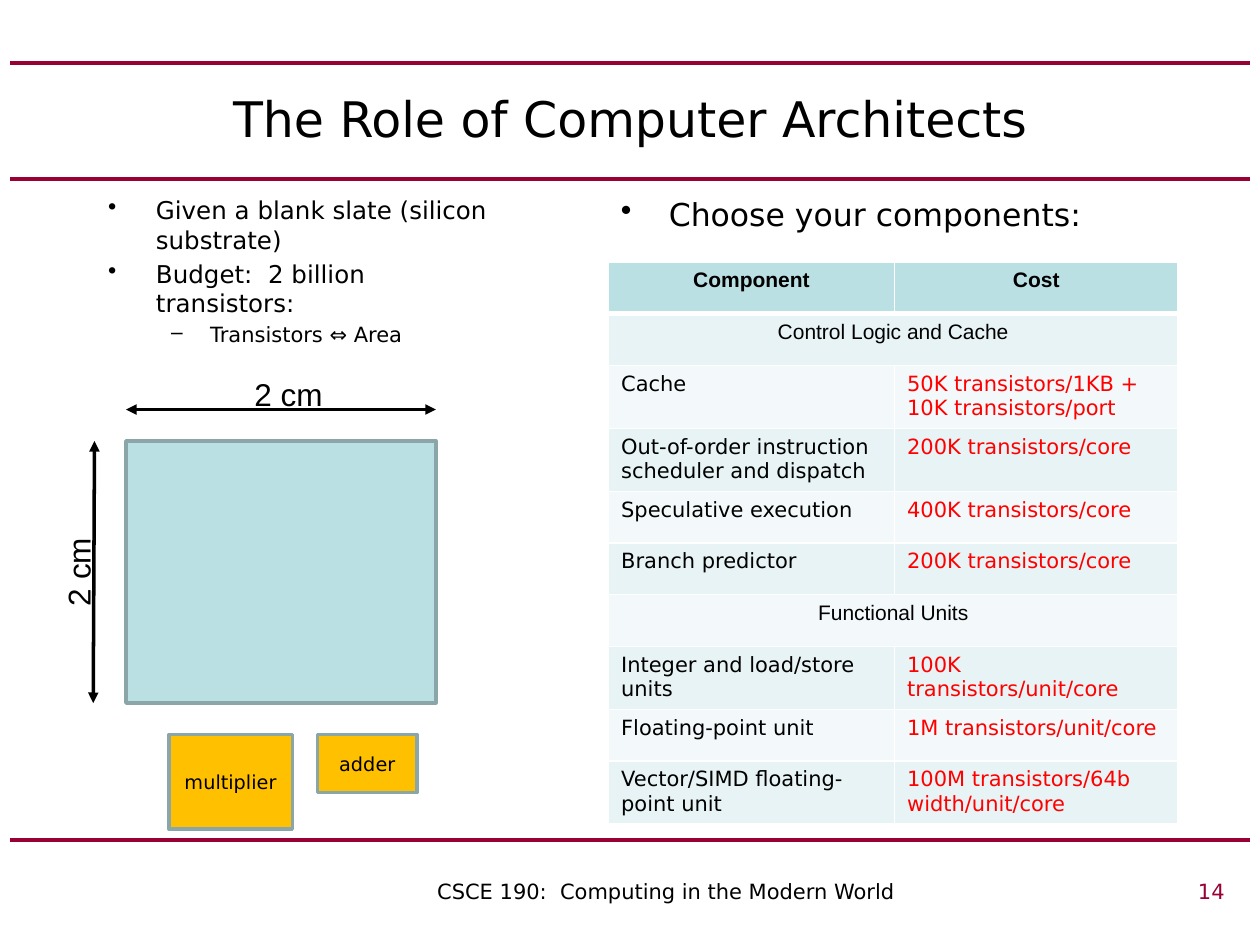
from lxml import etree
from pptx import Presentation
from pptx.dml.color import RGBColor
from pptx.enum.dml import MSO_THEME_COLOR
from pptx.enum.shapes import MSO_CONNECTOR, MSO_SHAPE
from pptx.enum.text import MSO_ANCHOR, PP_ALIGN
from pptx.oxml import parse_xml
from pptx.oxml.ns import nsdecls, qn
from pptx.util import Inches, Pt

CENTER, LEFT = PP_ALIGN.CENTER, PP_ALIGN.LEFT
MIDDLE, TOP = MSO_ANCHOR.MIDDLE, MSO_ANCHOR.TOP
STRAIGHT, RECTANGLE = MSO_CONNECTOR.STRAIGHT, MSO_SHAPE.RECTANGLE

THEME = {
    "sans": "DejaVu Sans", "arial": "Arial",
    "black": "000000", "garnet": "990033", "red": "FF0000",
    "teal": "BBE0E3", "edge": "8AA6A8", "amber": "FFC000",
    "band": ["F3F9FA", "E7F3F4"], "grid": "FFFFFF",
    "title": 28, "heading": 18, "bullet": 14, "small": 12, "unit": 11,
}


def style(paragraph, size, font=THEME["sans"], color=THEME["black"], align=LEFT, bold=False):
    paragraph.alignment = align
    for run in paragraph.runs:
        run.font.size = Pt(size)
        run.font.name = font
        run.font.bold = bold
        run.font.color.rgb = RGBColor.from_string(color)


def draw_line(shapes, x1, y1, x2, y2, color, width, arrows=False):
    line = shapes.add_connector(STRAIGHT, Inches(x1), Inches(y1), Inches(x2), Inches(y2))
    line.line.color.rgb = RGBColor.from_string(color)
    line.line.width = Pt(width)
    properties = line._element.spPr
    if arrows:
        for end in ("a:headEnd", "a:tailEnd"):
            etree.SubElement(properties.find(qn("a:ln")), qn(end), type="triangle")
    etree.SubElement(properties, qn("a:effectLst"))


prs = Presentation()
prs.slide_width, prs.slide_height = Inches(10), Inches(7.5)
slide = prs.slides.add_slide(prs.slide_layouts[5])
shapes = slide.shapes

for y in (6.67, 1.42, 0.5):
    draw_line(shapes, 0.08, y, 9.92, y, THEME["garnet"], 2.25)

title = shapes.title
title.left, title.top, title.width, title.height = Inches(0.5), Inches(0.5), Inches(9), Inches(0.87)
title.text_frame.text = "The Role of Computer Architects"
title.text_frame.vertical_anchor = MIDDLE
style(title.text_frame.paragraphs[0], THEME["title"], align=CENTER)

bullet_boxes = [
    ((0.76, 1.5, 3.33, 1.4), [
        ("Given a blank slate (silicon substrate)", 0, THEME["bullet"]),
        ("Budget:  2 billion transistors:", 0, THEME["bullet"]),
        ("Transistors ⇔ Area", 1, THEME["small"]),
    ]),
    ((4.83, 1.5, 4, 0.42), [("Choose your components:", 0, THEME["heading"])]),
]
bullet_levels = [("•", 0.38, -0.38), ("–", 0.81, -0.31)]
for place, items in bullet_boxes:
    frame = shapes.add_textbox(*map(Inches, place)).text_frame
    frame.word_wrap = True
    for index, (text, level, size) in enumerate(items):
        item = frame.add_paragraph() if index else frame.paragraphs[0]
        item.text = text
        item.level = level
        mark, margin, indent = bullet_levels[level]
        properties = item._p.get_or_add_pPr()
        properties.set("marL", str(Inches(margin)))
        properties.set("indent", str(Inches(indent)))
        etree.SubElement(properties, qn("a:buChar"), char=mark)
        if index:
            item.space_before = Pt(0.2 * size)
        style(item, size)

blocks = [
    ((1, 3.5, 2.46, 2.08), THEME["teal"], ""),
    ((2.52, 5.83, 0.79, 0.46), THEME["amber"], "adder"),
    ((1.34, 5.83, 0.98, 0.75), THEME["amber"], "multiplier"),
]
for place, color, label in blocks:
    block = shapes.add_shape(RECTANGLE, *map(Inches, place))
    block.shadow.inherit = False
    block.fill.solid()
    block.fill.fore_color.rgb = RGBColor.from_string(color)
    block.line.color.rgb = RGBColor.from_string(THEME["edge"])
    block.line.width = Pt(2)
    if label:
        block.text_frame.text = label
        block.text_frame.vertical_anchor = MIDDLE
        style(block.text_frame.paragraphs[0], THEME["unit"], align=CENTER)

draw_line(shapes, 1, 3.25, 3.46, 3.25, THEME["black"], 2, arrows=True)
draw_line(shapes, 0.74, 5.58, 0.75, 3.5, THEME["black"], 2, arrows=True)
for x, y, rotation in ((1.83, 2.93, 0), (0.16, 4.34, 270)):
    dimension = shapes.add_textbox(Inches(x), Inches(y), Inches(0.92), Inches(0.4))
    dimension.rotation = rotation
    dimension.text_frame.word_wrap = True
    dimension.text_frame.text = "2 cm"
    style(dimension.text_frame.paragraphs[0], THEME["heading"], THEME["arial"], align=CENTER)

costs = [
    ("Component", "Cost"),
    ("Control Logic and Cache", None),
    ("Cache", "50K transistors/1KB + 10K transistors/port"),
    ("Out-of-order instruction scheduler and dispatch", "200K transistors/core"),
    ("Speculative execution", "400K transistors/core"),
    ("Branch predictor", "200K transistors/core"),
    ("Functional Units", None),
    ("Integer and load/store units", "100K transistors/unit/core"),
    ("Floating-point unit", "1M transistors/unit/core"),
    ("Vector/SIMD floating-point unit", "100M transistors/64b width/unit/core"),
]
two_line_rows = (2, 3, 7, 9)
table = shapes.add_table(len(costs), 2, Inches(4.83), Inches(2.08), Inches(4.52), Inches(4.43)).table
table.columns[0].width, table.columns[1].width = Inches(2.27), Inches(2.25)
for row, texts in enumerate(costs):
    table.rows[row].height = Inches(0.5 if row in two_line_rows else 0.41)
    header, section = row == 0, texts[1] is None
    if section:
        table.cell(row, 0).merge(table.cell(row, 1))
    for column, text in enumerate(texts):
        cell = table.cell(row, column)
        for side in "LRTB":
            thick = (row, side) in ((0, "B"), (1, "T"))
            cell._tc.get_or_add_tcPr().append(parse_xml(
                f'<a:ln{side} {nsdecls("a")} w="{Pt(3 if thick else 1)}"><a:solidFill>'
                f'<a:srgbClr val="{THEME["grid"]}"/></a:solidFill></a:ln{side}>'))
        cell.fill.solid()
        cell.fill.fore_color.rgb = RGBColor.from_string(THEME["teal"] if header else THEME["band"][row % 2])
        cell.vertical_anchor = TOP
        if text:
            cell.text_frame.text = text
            centered = header or section
            style(cell.text_frame.paragraphs[0], THEME["small"],
                  THEME["arial"] if centered else THEME["sans"],
                  THEME["red"] if column and not header else THEME["black"],
                  CENTER if centered else LEFT, header)

footer = shapes.add_textbox(Inches(2.83), Inches(6.92), Inches(7), Inches(0.33)).text_frame
footer.word_wrap = True
footer.margin_left = Inches(0.64)
course = footer.paragraphs[0]
tabs = etree.SubElement(course._p.get_or_add_pPr(), qn("a:tabLst"))
etree.SubElement(tabs, qn("a:tab"), pos=str(Inches(6.25)), algn="r")
for text in ("CSCE 190:  Computing in the Modern World\t", "14"):
    course.add_run().text = text
style(course, THEME["small"])
course.runs[1].font.color.rgb = RGBColor.from_string(THEME["garnet"])

prs.save("out.pptx")
